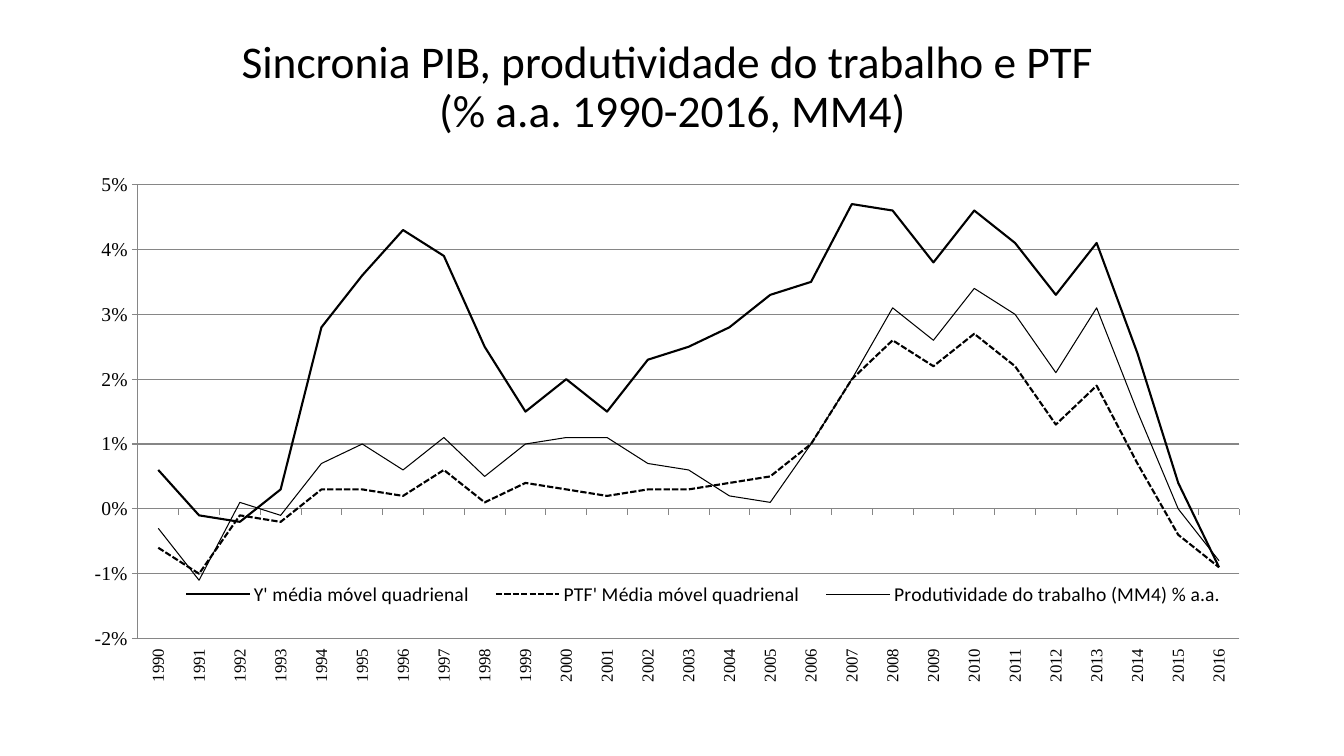
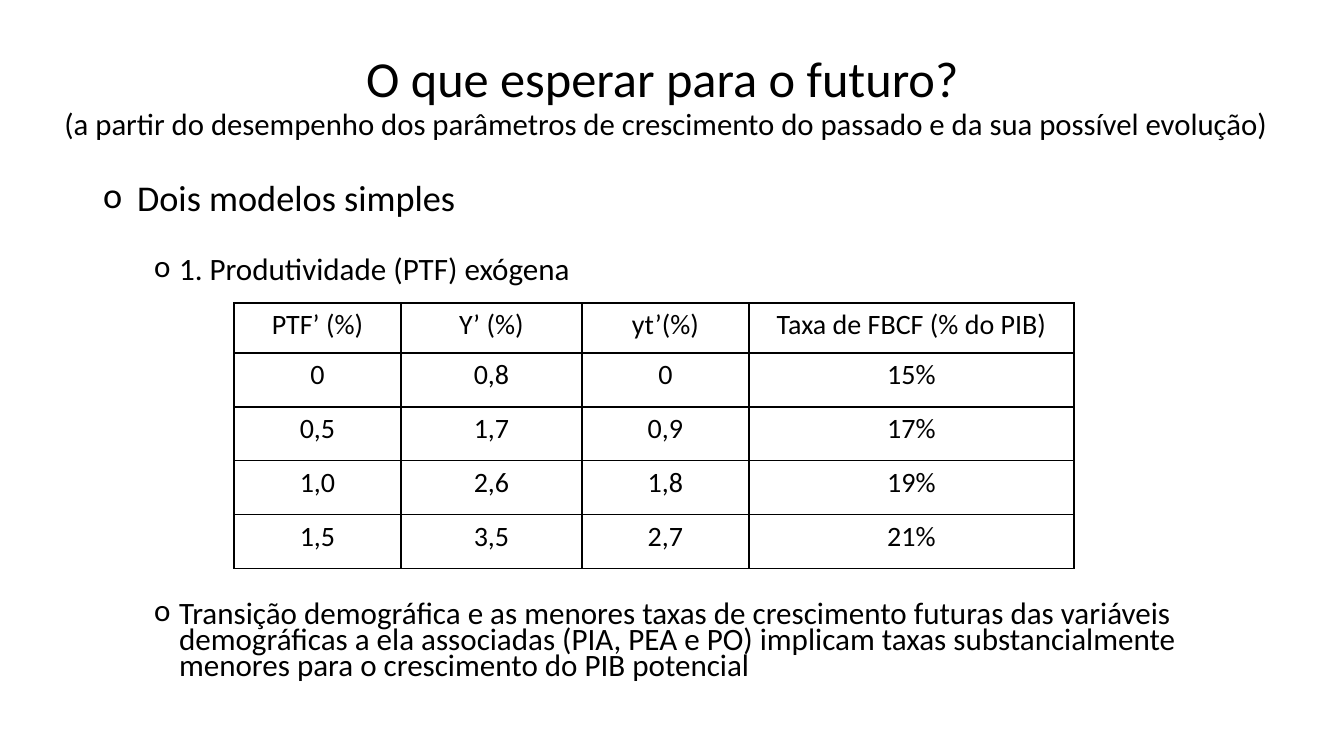
from copy import deepcopy

from pptx import Presentation
from pptx.chart.data import CategoryChartData
from pptx.dml.color import RGBColor
from pptx.enum.chart import XL_CHART_TYPE, XL_LEGEND_POSITION, XL_MARKER_STYLE
from pptx.enum.chart import XL_TICK_LABEL_POSITION, XL_TICK_MARK
from pptx.enum.dml import MSO_LINE
from pptx.enum.text import MSO_ANCHOR, MSO_AUTO_SIZE, PP_ALIGN
from pptx.oxml.ns import qn
from pptx.oxml.xmlchemy import OxmlElement
from pptx.util import Emu, Pt

LINE_CHART = XL_CHART_TYPE.LINE
LEGEND_RIGHT = XL_LEGEND_POSITION.RIGHT
NO_MARKER = XL_MARKER_STYLE.NONE
LABELS_LOW = XL_TICK_LABEL_POSITION.LOW
TICK_OUTSIDE = XL_TICK_MARK.OUTSIDE
TICK_NONE = XL_TICK_MARK.NONE
SOLID = MSO_LINE.SOLID
SHORT_DASH = MSO_LINE.SQUARE_DOT
MIDDLE = MSO_ANCHOR.MIDDLE
TOP = MSO_ANCHOR.TOP
NO_AUTOFIT = MSO_AUTO_SIZE.NONE
CENTER = PP_ALIGN.CENTER
LEFT = PP_ALIGN.LEFT

BLACK = RGBColor(0x00, 0x00, 0x00)
GRAY = RGBColor(0x86, 0x86, 0x86)
BODY_FONT = "Calibri"
AXIS_FONT = "Times New Roman"
SLIDE_SIZE = (1344, 756)
TITLE_ONLY_LAYOUT = 5
CONTENT_LAYOUT = 1

YEARS = [str(year) for year in range(1990, 2017)]
GROWTH_SERIES = [
    ("Y' média móvel quadrienal", 1.5, SOLID,
     [0.006, -0.001, -0.002, 0.003, 0.028, 0.036, 0.043, 0.039, 0.025,
      0.015, 0.02, 0.015, 0.023, 0.025, 0.028, 0.033, 0.035, 0.047,
      0.046, 0.038, 0.046, 0.041, 0.033, 0.041, 0.024, 0.004, -0.009]),
    ("PTF' Média móvel quadrienal", 1.5, SHORT_DASH,
     [-0.006, -0.01, -0.001, -0.002, 0.003, 0.003, 0.002, 0.006, 0.001,
      0.004, 0.003, 0.002, 0.003, 0.003, 0.004, 0.005, 0.01, 0.02,
      0.026, 0.022, 0.027, 0.022, 0.013, 0.019, 0.007, -0.004, -0.009]),
    ("Produtividade do trabalho (MM4) % a.a.", 0.75, SOLID,
     [-0.003, -0.011, 0.001, -0.001, 0.007, 0.01, 0.006, 0.011, 0.005,
      0.01, 0.011, 0.011, 0.007, 0.006, 0.002, 0.001, 0.01, 0.02,
      0.031, 0.026, 0.034, 0.03, 0.021, 0.031, 0.015, 0, -0.008]),
]
SCENARIOS = [
    ("PTF’ (%)", "Y’ (%)", "yt’(%)", "Taxa de FBCF (% do PIB)"),
    ("0", "0,8", "0", "15%"),
    ("0,5", "1,7", "0,9", "17%"),
    ("1,0", "2,6", "1,8", "19%"),
    ("1,5", "3,5", "2,7", "21%"),
]
# Text, level, size, space before, left margin, hanging indent
MODEL_POINTS = [
    ("Dois modelos simples", 0, 25.9, 10, 34, 34),
    ("1. Produtividade (PTF) exógena", 1, 22.2, 30, 76, 25),
    ("Transição demográfica e as menores taxas de crescimento futuras das "
     "variáveis demográficas a ela associadas (PIA, PEA e PO) implicam taxas "
     "substancialmente menores para o crescimento do PIB potencial",
     1, 22.2, 227, 76, 25),
]


def px(length):
    return Emu(round(length * 914400 / 100.8))


def place(shape, box):
    shape.left, shape.top, shape.width, shape.height = map(px, box)


def style_font(font, size, name=BODY_FONT):
    font.size = Pt(size)
    font.name = name
    font.bold = False
    font.color.rgb = BLACK


def style_line(line, color, width):
    line.color.rgb = color
    line.width = Pt(width)


def add_child(parent, tag, **attributes):
    child = OxmlElement(tag)
    for name, value in attributes.items():
        child.set(name, str(value))
    parent.append(child)
    return child


def fill_title(slide, box, text, sizes):
    """Set a title whose lines, split by a vertical tab, have the given sizes."""
    title = slide.shapes.title
    place(title, box)
    frame = title.text_frame
    frame.auto_size = NO_AUTOFIT
    frame.vertical_anchor = MIDDLE
    paragraph = frame.paragraphs[0]
    paragraph.text = text
    paragraph.alignment = CENTER
    paragraph.line_spacing = 0.9
    for run, size in zip(paragraph.runs, sizes):
        style_font(run.font, size)
    for line_break in paragraph._p.findall(qn("a:br")):
        line_break.append(deepcopy(paragraph.runs[0]._r.rPr))


def set_layout(element, index, fractions, inner=False):
    """Fix the place of a chart part as fractions of the chart."""
    layout = element.find(qn("c:layout"))
    if layout is not None:
        element.remove(layout)
    layout = OxmlElement("c:layout")
    element.insert(index, layout)
    manual = add_child(layout, "c:manualLayout")
    if inner:
        add_child(manual, "c:layoutTarget", val="inner")
    for mode in ("xMode", "yMode"):
        add_child(manual, f"c:{mode}", val="edge")
    for name, value in zip("xywh", fractions):
        add_child(manual, f"c:{name}", val=value)


def style_axes(chart):
    category_axis, value_axis = chart.category_axis, chart.value_axis
    for axis, size in ((category_axis, 12), (value_axis, 14)):
        style_font(axis.tick_labels.font, size, AXIS_FONT)
        style_line(axis.format.line, GRAY, 0.75)
        axis.major_tick_mark = TICK_OUTSIDE
        axis.minor_tick_mark = TICK_NONE
    category_axis.tick_label_position = LABELS_LOW
    category_axis._element.txPr.bodyPr.set("rot", "-5400000")
    value_axis.minimum_scale = -0.02
    value_axis.maximum_scale = 0.05
    value_axis.major_unit = 0.01
    value_axis.has_major_gridlines = True
    style_line(value_axis.major_gridlines.format.line, GRAY, 0.75)
    value_axis.tick_labels.number_format = "0%"
    value_axis.tick_labels.number_format_is_linked = False


def add_growth_chart(slide, box):
    data = CategoryChartData(number_format="0.0%")
    data.categories = YEARS
    for name, _, _, values in GROWTH_SERIES:
        data.add_series(name, values)
    chart = slide.shapes.add_chart(LINE_CHART, *map(px, box), data).chart
    style_font(chart.font, 10)
    chart.has_title = False
    plot = chart.plots[0]
    plot.vary_by_categories = False
    for series, (_, width, dash, _) in zip(plot.series, GROWTH_SERIES):
        series.smooth = False
        series.marker.style = NO_MARKER
        style_line(series.format.line, BLACK, width)
        series.format.line.dash_style = dash
    style_axes(chart)
    chart.has_legend = True
    legend = chart.legend
    legend.position = LEGEND_RIGHT
    legend.include_in_layout = False
    style_font(legend.font, 14)
    set_layout(legend._element, 1, (0.08, 0.77, 0.89, 0.06))
    plot_area = chart._chartSpace.chart.plotArea
    set_layout(plot_area, 0, (0.057, 0.024, 0.912, 0.86), inner=True)


def set_bullet(paragraph, margin, hanging):
    properties = paragraph._p.get_or_add_pPr()
    properties.set("marL", str(px(margin)))
    properties.set("indent", str(-px(hanging)))
    add_child(properties, "a:buFont", typeface=BODY_FONT)
    add_child(properties, "a:buChar", char="o")


def fill_points(slide, box):
    body = slide.placeholders[1]
    place(body, box)
    frame = body.text_frame
    frame.auto_size = NO_AUTOFIT
    frame.vertical_anchor = TOP
    frame.text = "\n".join(point[0] for point in MODEL_POINTS)
    for paragraph, point in zip(frame.paragraphs, MODEL_POINTS):
        _, level, size, space, margin, hanging = point
        paragraph.level = level
        paragraph.alignment = LEFT
        paragraph.line_spacing = 0.7
        paragraph.space_before = Pt(space)
        set_bullet(paragraph, margin, hanging)
        style_font(paragraph.runs[0].font, size)


def set_borders(cell):
    properties = cell._tc.get_or_add_tcPr()
    for index, side in enumerate(("lnL", "lnR", "lnT", "lnB")):
        line = OxmlElement(f"a:{side}")
        line.set("w", str(Pt(1)))
        add_child(add_child(line, "a:solidFill"), "a:srgbClr", val=BLACK)
        properties.insert(index, line)


def style_cell(cell, text):
    cell.text_frame.text = text
    cell.fill.background()
    cell.margin_left = cell.margin_right = px(7)
    cell.margin_top = cell.margin_bottom = 0
    cell.vertical_anchor = TOP
    paragraph = cell.text_frame.paragraphs[0]
    paragraph.alignment = CENTER
    paragraph.line_spacing = 1.15
    paragraph.space_after = Pt(6)
    style_font(paragraph.runs[0].font, 20)
    set_borders(cell)


def add_scenario_table(slide, left, top, column_widths, row_heights):
    frame = slide.shapes.add_table(
        len(row_heights), len(column_widths), px(left), px(top),
        px(sum(column_widths)), px(sum(row_heights)))
    table = frame.table
    table.first_row = table.horz_banding = False
    for column, width in zip(table.columns, column_widths):
        column.width = px(width)
    for row, height, texts in zip(table.rows, row_heights, SCENARIOS):
        row.height = px(height)
        for cell, text in zip(row.cells, texts):
            style_cell(cell, text)


def build_growth_slide(presentation):
    layout = presentation.slide_layouts[TITLE_ONLY_LAYOUT]
    slide = presentation.slides.add_slide(layout)
    fill_title(slide, (93, 31, 1159, 115),
               "Sincronia PIB, produtividade do trabalho e PTF \v"
               "(% a.a. 1990-2016, MM4)", (32.4, 32.4))
    add_growth_chart(slide, (69, 172, 1208, 528))


def build_outlook_slide(presentation):
    layout = presentation.slide_layouts[CONTENT_LAYOUT]
    slide = presentation.slides.add_slide(layout)
    fill_title(slide, (0, 28, 1325, 140),
               "O que esperar para o futuro?\v (a partir do desempenho dos "
               "parâmetros de crescimento do passado e da sua possível "
               "evolução)", (36, 22))
    fill_points(slide, (93, 182, 1184, 542))
    add_scenario_table(slide, 234, 303, (167, 181, 167, 325),
                       (50, 54, 54, 54, 54))


def main():
    presentation = Presentation()
    presentation.slide_width, presentation.slide_height = map(px, SLIDE_SIZE)
    build_growth_slide(presentation)
    build_outlook_slide(presentation)
    presentation.save("out.pptx")


if __name__ == "__main__":
    main()
